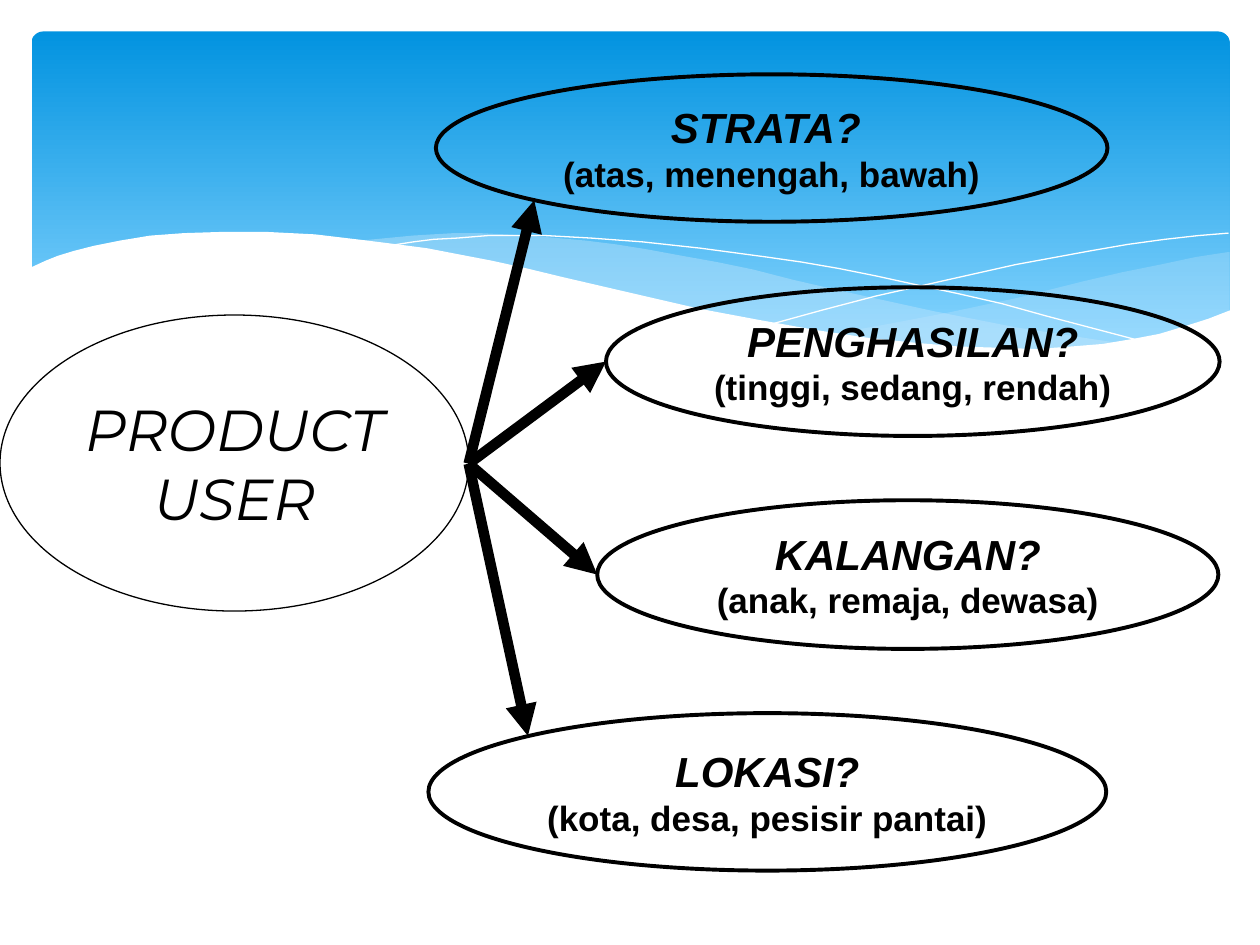
import pptx
import pptx.util
import pptx.dml.color
import pptx.enum.shapes
import pptx.enum.text
import pptx.oxml.ns
from lxml import etree

Inches = pptx.util.Inches
Pt = pptx.util.Pt
RGB = pptx.dml.color.RGBColor
KIND = pptx.enum.shapes.MSO_SHAPE
qn = pptx.oxml.ns.qn

BLACK = RGB(0, 0, 0)
WHITE = RGB(255, 255, 255)
DEEP = RGB(0x02, 0x93, 0xE0)
SKY = RGB(0x83, 0xD3, 0xFE)
PALE = RGB(0xC6, 0xE7, 0xFC)

RIGHT = [
    (9.75, 2), (9.49, 2.04), (9.21, 2.1), (8.91, 2.16), (8.61, 2.23),
    (8.05, 2.37), (7.53, 2.48), (7.06, 2.57), (6.61, 2.65), (6.91, 2.69),
    (7.19, 2.72), (7.45, 2.75), (7.69, 2.77), (8.03, 2.78), (8.35, 2.77),
    (8.63, 2.75), (8.89, 2.72), (9.13, 2.67), (9.35, 2.61), (9.63, 2.52),
    (9.76, 2.47), (9.76, 2)]
MIDDLE = [
    (8.93, 2.73), (8.66, 2.69), (8.07, 2.6), (7.41, 2.47), (6.68, 2.31),
    (6.29, 2.22), (5.98, 2.14), (5.69, 2.08), (5.41, 2.03), (5.14, 1.98),
    (4.89, 1.94), (4.65, 1.91), (4.2, 1.87), (3.8, 1.85), (3.61, 1.85),
    (3.28, 1.87), (2.86, 1.91), (3.23, 1.96), (3.62, 2.03), (4.04, 2.11),
    (4.49, 2.22), (4.91, 2.32), (5.3, 2.4), (5.66, 2.48), (6.01, 2.55),
    (6.34, 2.61), (6.65, 2.66), (6.95, 2.7), (7.22, 2.74), (7.48, 2.76),
    (7.85, 2.78), (8.28, 2.78), (8.57, 2.77)]
LONG = [
    (3.09, 1.95), (3.28, 1.92), (3.44, 1.9), (3.63, 1.89), (3.87, 1.87),
    (4.33, 1.87), (4.69, 1.89), (5.1, 1.92), (5.56, 1.97), (6.08, 2.04),
    (6.36, 2.08), (6.65, 2.13), (6.95, 2.19), (7.27, 2.26), (7.6, 2.33),
    (7.95, 2.41), (8.31, 2.51), (8.69, 2.61), (9.07, 2.71)]
SHORT = [
    (6.13, 2.57), (6.53, 2.46), (6.95, 2.35), (7.48, 2.23), (8.06, 2.1),
    (8.66, 1.99), (8.95, 1.94), (9.24, 1.9), (9.51, 1.87), (9.75, 1.85)]
FRONT = [
    (9.77, 2.46), (9.59, 2.53), (9.4, 2.59), (9.2, 2.65), (8.99, 2.69),
    (8.75, 2.73), (8.5, 2.75), (8.23, 2.77), (7.93, 2.76), (7.61, 2.75),
    (7.26, 2.72), (6.88, 2.68), (6.48, 2.62), (6.03, 2.54), (5.55, 2.45),
    (5.03, 2.33), (4.47, 2.2), (4.18, 2.13), (3.91, 2.07), (3.65, 2.02),
    (3.39, 1.97), (3.16, 1.94), (2.92, 1.91), (2.5, 1.86), (2.11, 1.84),
    (1.77, 1.84), (1.46, 1.85), (1.19, 1.87), (0.95, 1.91), (0.75, 1.95),
    (0.59, 1.99), (0.46, 2.03), (0.36, 2.07), (0.23, 2.13), (0.23, 3.29),
    (9.77, 3.29)]

HUB = (3.72, 3.68)
# ellipse box, heading, detail, arrow tip
TOPICS = [
    ((3.46, 0.59, 5.33, 1.17), "STRATA? ", "(atas, menengah, bawah)", (4.24, 1.59)),
    ((4.81, 2.28, 4.87, 1.18), "PENGHASILAN?", "(tinggi, sedang, rendah)", (4.81, 2.87)),
    ((4.74, 3.97, 4.93, 1.18), "KALANGAN?", "(anak, remaja, dewasa)", (4.74, 4.56)),
    ((3.4, 5.66, 5.38, 1.25), "LOKASI?", "(kota, desa, pesisir pantai)", (4.19, 5.84)),
]


def add_band(slide):
    band = slide.shapes.add_shape(
        KIND.ROUNDED_RECTANGLE, *map(Inches, (0.25, 0.25, 9.51, 2.7)))
    band.shadow.inherit = False
    band.adjustments[0] = 0.034
    band.line.fill.background()
    band.fill.gradient()
    band.fill.gradient_angle = 270
    for stop, place, color in zip(band.fill.gradient_stops, (0, 0.9), (DEEP, SKY)):
        stop.position = place
        stop.color.rgb = color


def add_path(slide, points, closed):
    first, *rest = [(Inches(x), Inches(y)) for x, y in points]
    pen = slide.shapes.build_freeform(*first)
    pen.add_line_segments(rest, close=closed)
    shape = pen.convert_to_shape()
    shape.shadow.inherit = False
    return shape


def add_wave(slide, points, color, alpha=100):
    """Add a filled wave; alpha is its opacity in percent."""
    wave = add_path(slide, points, True)
    wave.line.fill.background()
    wave.fill.solid()
    wave.fill.fore_color.rgb = color
    if alpha < 100:
        tint = next(wave.fill._xPr.iter(qn("a:srgbClr")))
        etree.SubElement(tint, qn("a:alpha"), val=str(alpha * 1000))


def add_curve(slide, points):
    curve = add_path(slide, points, False)
    curve.fill.background()
    curve.line.color.rgb = WHITE
    curve.line.width = Pt(0)


def add_oval(slide, box, width, inset):
    """Add an unfilled ellipse and return its text frame."""
    oval = slide.shapes.add_shape(KIND.OVAL, *map(Inches, box))
    oval.shadow.inherit = False
    oval.fill.background()
    oval.line.color.rgb = BLACK
    oval.line.width = Pt(width)
    frame = oval.text_frame
    frame.word_wrap = True
    frame.vertical_anchor = pptx.enum.text.MSO_ANCHOR.MIDDLE
    frame.margin_left = frame.margin_right = Inches(inset)
    frame.margin_top = frame.margin_bottom = Inches(0.04)
    return frame


def set_text(para, text, face, size, bold, italic):
    para.text = text
    para.alignment = pptx.enum.text.PP_ALIGN.CENTER
    font = para.font
    font.name = face
    font.size = Pt(size)
    font.bold = bold
    font.italic = italic
    font.color.rgb = BLACK


def add_arrow(slide, start, end):
    arrow = slide.shapes.add_connector(
        pptx.enum.shapes.MSO_CONNECTOR.STRAIGHT, *map(Inches, start + end))
    arrow.line.color.rgb = BLACK
    arrow.line.width = Pt(6)
    etree.SubElement(arrow.line._get_or_add_ln(), qn("a:tailEnd"), type="triangle")
    etree.SubElement(arrow._element.spPr, qn("a:effectLst"))


def main():
    deck = pptx.Presentation()
    deck.slide_width, deck.slide_height = Inches(10), Inches(7.5)
    slide = deck.slides.add_slide(deck.slide_layouts[6])

    add_band(slide)
    add_wave(slide, RIGHT, PALE, 29)
    add_wave(slide, MIDDLE, PALE, 40)
    add_curve(slide, LONG)
    add_curve(slide, SHORT)
    add_wave(slide, FRONT, WHITE)

    frame = add_oval(slide, (0, 2.5, 3.72, 2.35), 0.75, 0)
    set_text(frame.paragraphs[0], "PRODUCT USER", "Montserrat", 33, False, True)
    for box, head, note, tip in TOPICS:
        frame = add_oval(slide, box, 2.25, 0.04)
        set_text(frame.paragraphs[0], head, "Arial", 24, True, True)
        set_text(frame.add_paragraph(), note, "Arial", 20, True, False)
    for *rest, tip in TOPICS:
        add_arrow(slide, HUB, tip)

    deck.save("out.pptx")


if __name__ == "__main__":
    main()
